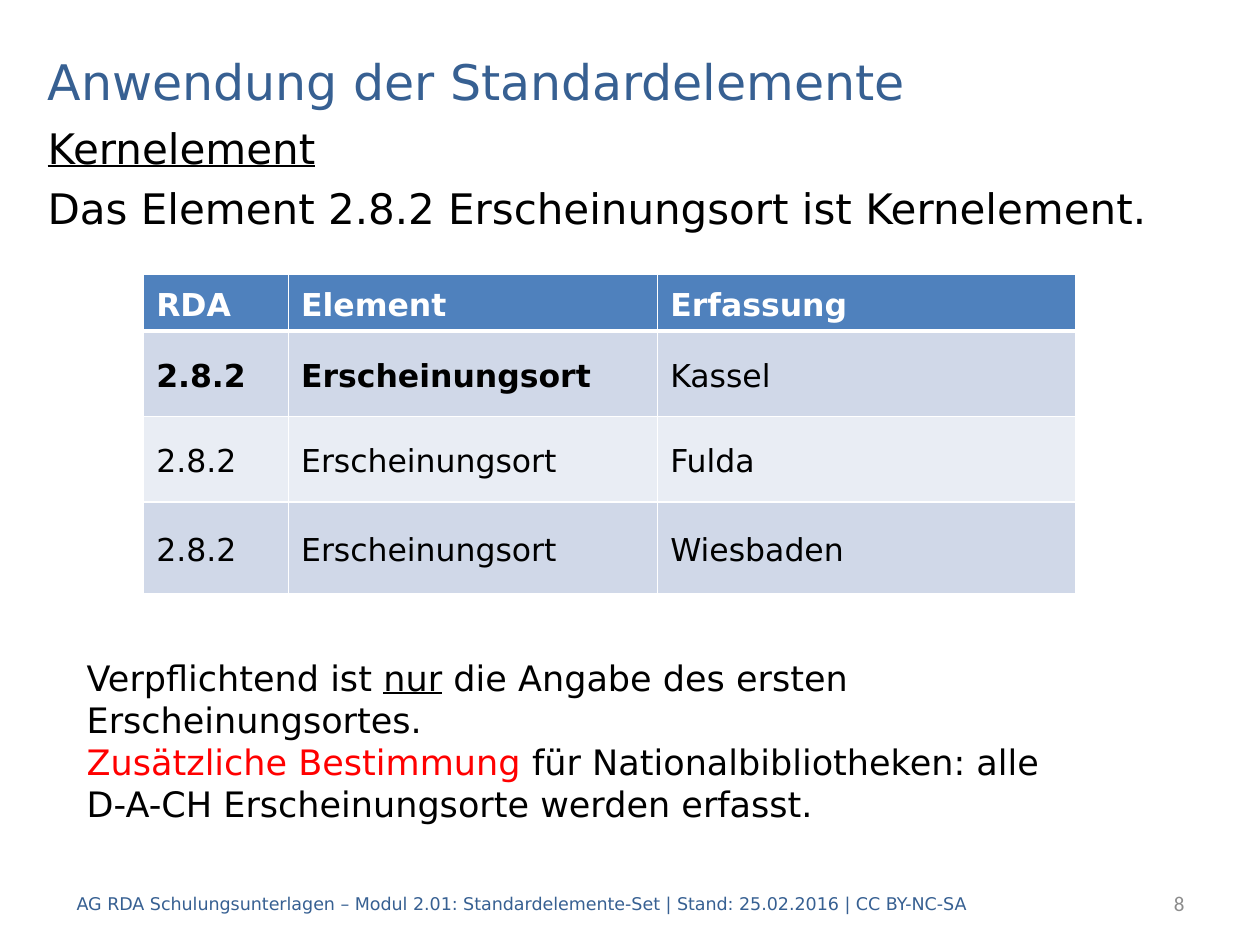
from dataclasses import dataclass

from lxml import etree
from pptx import Presentation
from pptx.dml.color import RGBColor
from pptx.enum.text import MSO_ANCHOR, PP_ALIGN
from pptx.oxml.ns import qn
from pptx.util import Inches, Pt

TOP, MIDDLE = MSO_ANCHOR.TOP, MSO_ANCHOR.MIDDLE
LEFT, RIGHT = PP_ALIGN.LEFT, PP_ALIGN.RIGHT
SLIDE_W, SLIDE_H = Inches(10), Inches(7.5)


@dataclass(frozen=True)
class Theme:
    font: str = "DejaVu Sans"
    number_font: str = "Calibri"
    blue: str = "376092"
    black: str = "000000"
    white: str = "FFFFFF"
    red: str = "FF0000"
    grey: str = "8C8C8C"
    header: str = "4F81BD"
    bands: tuple[str, str] = ("D0D8E8", "E9EDF4")
    title: int = 28
    body: int = 24
    note: int = 20
    cell: int = 18
    number: int = 12
    footer: int = 10


@dataclass(frozen=True)
class Run:
    text: str
    color: str | None = None
    underline: bool = False


@dataclass(frozen=True)
class Box:
    """Position and size in percent of the slide."""
    x: float
    y: float
    w: float
    h: float

    def emu(self) -> tuple[int, int, int, int]:
        return across(self.x), down(self.y), across(self.w), down(self.h)


THEME = Theme()
TITLE = Box(2.8, 4.8, 94.5, 7.47)
BODY = Box(2.8, 12.27, 94.5, 79.73)
TABLE = Box(11.4, 29.07, 74, 33.74)
NOTE = Box(5.9, 63.6, 85, 24.67)
FOOTER = Box(5.1, 92.93, 85, 5.33)
NUMBER = Box(79.1, 92.93, 15.9, 5.33)
COLUMNS = (11.5, 29.3, 33.2)
ROWS = (5.87, 9.07, 9.07, 9.73)
CELLS = (
    ("RDA", "Element", "Erfassung"),
    ("2.8.2", "Erscheinungsort", "Kassel"),
    ("2.8.2", "Erscheinungsort", "Fulda"),
    ("2.8.2", "Erscheinungsort", "Wiesbaden"),
)


def across(share: float) -> int:
    return round(SLIDE_W * share / 100)


def down(share: float) -> int:
    return round(SLIDE_H * share / 100)


def write(tf, paragraphs: list[list[Run]], *, size: int, color: str = THEME.black,
          font: str = THEME.font, bold: bool = False, align=LEFT, anchor=TOP,
          before: float = 0, after: float = 0, spacing: float = 1.0) -> None:
    tf.word_wrap = True
    tf.vertical_anchor = anchor
    for i, runs in enumerate(paragraphs):
        p = tf.paragraphs[0] if i == 0 else tf.add_paragraph()
        p.alignment = align
        p.space_before, p.space_after = Pt(before), Pt(after)
        p.line_spacing = spacing
        for run in runs:
            r = p.add_run()
            r.text = run.text
            r.font.name, r.font.size = font, Pt(size)
            r.font.bold, r.font.underline = bold, run.underline
            r.font.color.rgb = RGBColor.from_string(run.color or color)


def add_text(s, box: Box, paragraphs: list[list[Run]], **fmt):
    sp = s.shapes.add_textbox(*box.emu())
    write(sp.text_frame, paragraphs, **fmt)
    return sp


def set_borders(cell, bottom: float, top: float) -> None:
    pr = cell._tc.get_or_add_tcPr()
    widths = (("a:lnL", 1), ("a:lnR", 1), ("a:lnT", top), ("a:lnB", bottom))
    for i, (tag, width) in enumerate(widths):
        ln = etree.Element(qn(tag), w=str(Pt(width)))
        fill = etree.SubElement(ln, qn("a:solidFill"))
        etree.SubElement(fill, qn("a:srgbClr"), val=THEME.white)
        pr.insert(i, ln)


def add_table(s, box: Box) -> None:
    table = s.shapes.add_table(len(ROWS), len(COLUMNS), *box.emu()).table
    for column, share in zip(table.columns, COLUMNS):
        column.width = across(share)
    for i, (row, share) in enumerate(zip(table.rows, ROWS)):
        row.height = down(share)
        header = i == 0
        fill = THEME.header if header else THEME.bands[(i - 1) % 2]
        for j, cell in enumerate(row.cells):
            cell.fill.solid()
            cell.fill.fore_color.rgb = RGBColor.from_string(fill)
            cell.vertical_anchor = MIDDLE
            write(cell.text_frame, [[Run(CELLS[i][j])]], size=THEME.cell,
                  color=THEME.white if header else THEME.black,
                  bold=header or (i == 1 and j < 2), after=10, spacing=1.15)
            set_borders(cell, bottom=3 if header else 1, top=3 if i == 1 else 1)


def main() -> None:
    prs = Presentation()
    prs.slide_width, prs.slide_height = SLIDE_W, SLIDE_H
    s = prs.slides.add_slide(prs.slide_layouts[5])

    title = s.shapes.title
    title.left, title.top, title.width, title.height = TITLE.emu()
    write(title.text_frame, [[Run("Anwendung der Standardelemente")]],
          size=THEME.title, color=THEME.blue, anchor=MIDDLE)

    add_text(s, BODY, [
        [Run("Kernelement", underline=True)],
        [Run("Das Element 2.8.2 Erscheinungsort ist Kernelement.")],
    ], size=THEME.body, before=5.6)
    add_table(s, TABLE)

    note = add_text(s, NOTE, [
        [Run("Verpflichtend ist "), Run("nur", underline=True),
         Run(" die Angabe des ersten Erscheinungsortes.")],
        [Run("Zusätzliche Bestimmung ", THEME.red),
         Run("für Nationalbibliotheken: alle")],
        [Run("D-A-CH Erscheinungsorte werden erfasst.")],
    ], size=THEME.note)
    note.text_frame.margin_top = down(5.87)

    add_text(s, FOOTER, [[Run("AG RDA Schulungsunterlagen – Modul 2.01: Standardelemente-Set"
                              " | Stand: 25.02.2016 | CC BY-NC-SA")]],
             size=THEME.footer, color=THEME.blue, anchor=MIDDLE)
    add_text(s, NUMBER, [[Run("8")]], size=THEME.number, color=THEME.grey,
             font=THEME.number_font, align=RIGHT, anchor=MIDDLE)
    prs.save("out.pptx")


if __name__ == "__main__":
    main()
